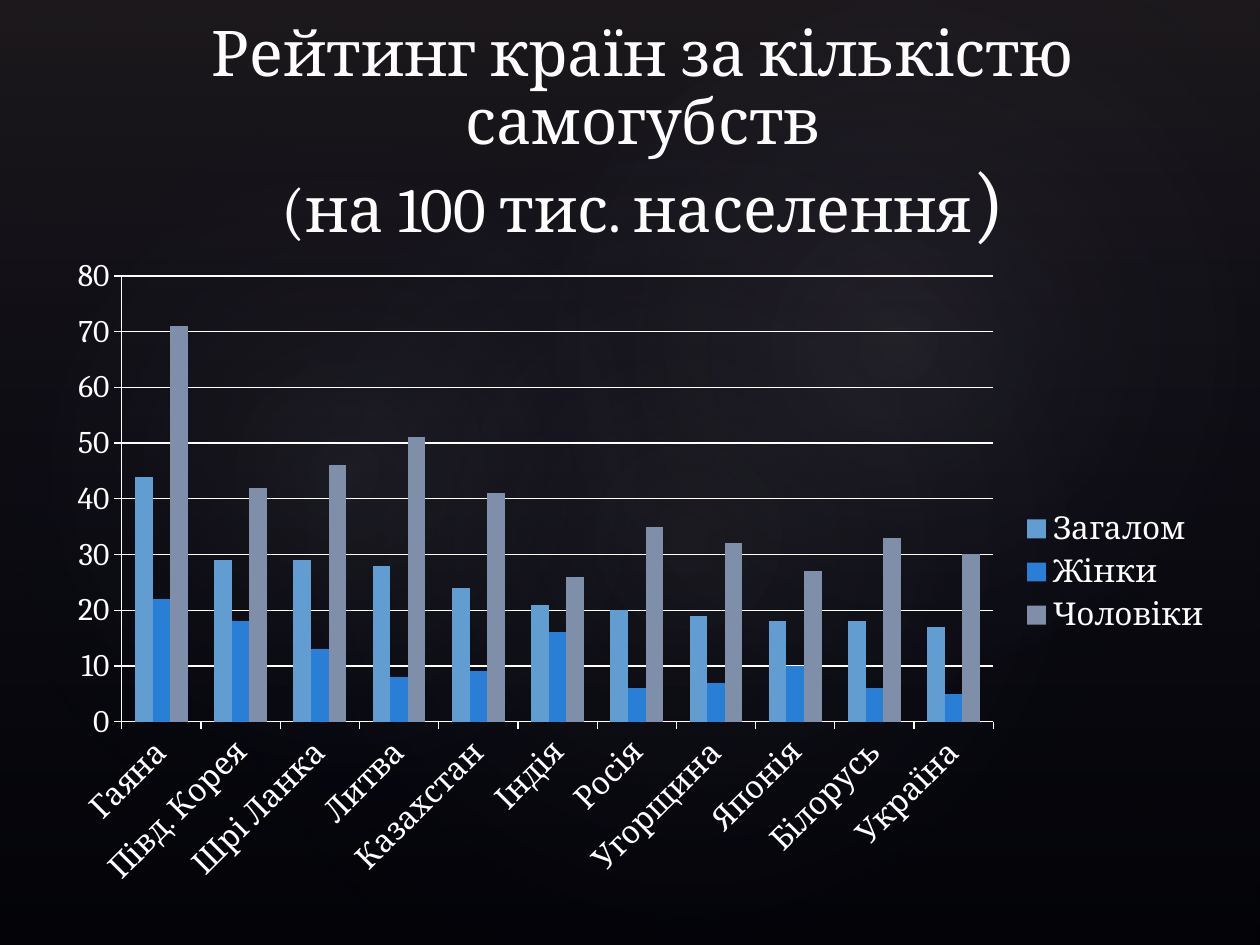
from lxml import etree
from pptx import Presentation
from pptx.chart.data import CategoryChartData
from pptx.dml.color import RGBColor
from pptx.enum.chart import XL_CHART_TYPE, XL_LEGEND_POSITION, XL_TICK_MARK
from pptx.enum.shapes import MSO_SHAPE
from pptx.enum.text import MSO_ANCHOR, PP_ALIGN
from pptx.oxml.ns import qn
from pptx.util import Inches, Pt

RECTANGLE, OVAL = MSO_SHAPE.RECTANGLE, MSO_SHAPE.OVAL
CLUSTERED, LEGEND_RIGHT = XL_CHART_TYPE.COLUMN_CLUSTERED, XL_LEGEND_POSITION.RIGHT
TICK_OUTSIDE, TICK_NONE = XL_TICK_MARK.OUTSIDE, XL_TICK_MARK.NONE
BOTTOM, CENTER = MSO_ANCHOR.BOTTOM, PP_ALIGN.CENTER

BLACK = RGBColor(0x00, 0x00, 0x00)
WHITE = RGBColor(0xFF, 0xFF, 0xFF)
PLUM = RGBColor(0x50, 0x46, 0x52)
NAVY = RGBColor(0x24, 0x28, 0x52)
MIST = RGBColor(0xC4, 0xBC, 0xC6)
SKY = RGBColor(0x62, 0x9D, 0xD1)
BLUE = RGBColor(0x29, 0x7F, 0xD5)
SLATE = RGBColor(0x7F, 0x8F, 0xA9)

COUNTRIES = ["Гаяна", "Півд. Корея", "Шрі Ланка", "Литва", "Казахстан", "Індія",
             "Росія", "Угорщина", "Японія", "Білорусь", "Україна"]
SERIES = [
    ("Загалом", SKY, [44, 29, 29, 28, 24, 21, 20, 19, 18, 18, 17]),
    ("Жінки", BLUE, [22, 18, 13, 8, 9, 16, 6, 7, 10, 6, 5]),
    ("Чоловіки", SLATE, [71, 42, 46, 51, 41, 26, 35, 32, 27, 33, 30]),
]
# left, top, width, height, rotation, opacity at the centre
GLOWS = [
    (1.5, 1.14, 7.92, 6.24, 328.7, 7),
    (-0.3, 1.28, 6.06, 4.9, 294.3, 8),
    (3.58, 0.13, 7.09, 5.2, 328.7, 8),
]


class SlideBuilder:
    font_name = "Cambria"
    title_size, bracket_size, chart_size = Pt(36), Pt(49), Pt(18)

    def __init__(self, deck):
        self.slide = deck.slides.add_slide(deck.slide_layouts[5])
        fill = self.slide.background.fill
        fill.solid()
        fill.fore_color.rgb = BLACK

    def style_font(self, font, size):
        font.name = self.font_name
        font.size = size
        font.color.rgb = WHITE

    def gradient_shape(self, preset, box, stops, rotation=0):
        """Add a borderless shape; stops are (position %, colour, opacity %)."""
        shape = self.slide.shapes.add_shape(preset, *map(Inches, box))
        shape.rotation = rotation
        shape.shadow.inherit = False
        shape.line.fill.background()
        shape.fill.background()
        gradient = etree.Element(qn("a:gradFill"), rotWithShape="1")
        stop_list = etree.SubElement(gradient, qn("a:gsLst"))
        for position, color, opacity in stops:
            stop = etree.SubElement(stop_list, qn("a:gs"), pos=str(position * 1000))
            rgb = etree.SubElement(stop, qn("a:srgbClr"), val=str(color))
            etree.SubElement(rgb, qn("a:alpha"), val=str(opacity * 1000))
        if preset == OVAL:
            radial = etree.SubElement(gradient, qn("a:path"), path="circle")
            sides = dict.fromkeys("ltrb", "50000")
            etree.SubElement(radial, qn("a:fillToRect"), **sides)
        else:
            etree.SubElement(gradient, qn("a:lin"), ang="5400000", scaled="0")
        properties = shape.element.spPr
        properties.replace(properties.find(qn("a:noFill")), gradient)

    def title(self, box, text, bracket):
        title = self.slide.shapes.title
        title.left, title.top, title.width, title.height = map(Inches, box)
        self.slide.shapes.element.append(title.element)  # in front of the backdrop
        frame = title.text_frame
        frame.word_wrap = True
        frame.vertical_anchor = BOTTOM
        frame.margin_bottom = 0
        frame.text = text
        para = frame.paragraphs[0]
        para.alignment = CENTER
        para.line_spacing = 0.9
        self.style_font(para.runs[0].font, self.title_size)
        self.style_font(para.runs[-1].font, self.title_size)
        span = para.add_run()
        span.text = bracket
        self.style_font(span.font, self.bracket_size)

    def column_chart(self, box, categories, series):
        data = CategoryChartData()
        data.categories = categories
        for name, _, values in series:
            data.add_series(name, values)
        chart = self.slide.shapes.add_chart(CLUSTERED, *map(Inches, box), data).chart
        self.style_font(chart.font, self.chart_size)
        chart.has_title = False
        chart.has_legend = True
        chart.legend.position = LEGEND_RIGHT
        chart.legend.include_in_layout = False
        plot = chart.plots[0]
        plot.gap_width = 150
        plot.overlap = 0
        plot.vary_by_categories = False
        for column, (_, color, _) in zip(plot.series, series):
            column.format.fill.solid()
            column.format.fill.fore_color.rgb = color
        for axis in (chart.category_axis, chart.value_axis):
            axis.major_tick_mark = TICK_OUTSIDE
            axis.minor_tick_mark = TICK_NONE
            axis.format.line.color.rgb = WHITE
        chart.value_axis.major_gridlines.format.line.color.rgb = WHITE


def main():
    deck = Presentation()
    deck.slide_width, deck.slide_height = Inches(10), Inches(7.5)
    builder = SlideBuilder(deck)
    builder.gradient_shape(RECTANGLE, (0, 0, 10, 7.5), [(0, PLUM, 36), (100, NAVY, 10)])
    for *box, rotation, opacity in GLOWS:
        builder.gradient_shape(OVAL, box, [(0, MIST, opacity), (58, NAVY, 0)], rotation)
    builder.title((0.98, 0.99, 8.25, 1),
                  "Рейтинг країн за кількістю самогубств\v(на 100 тис. населення", ")")
    builder.column_chart((0.43, 1.94, 9.29, 5.2), COUNTRIES, SERIES)
    deck.save("out.pptx")


if __name__ == "__main__":
    main()
